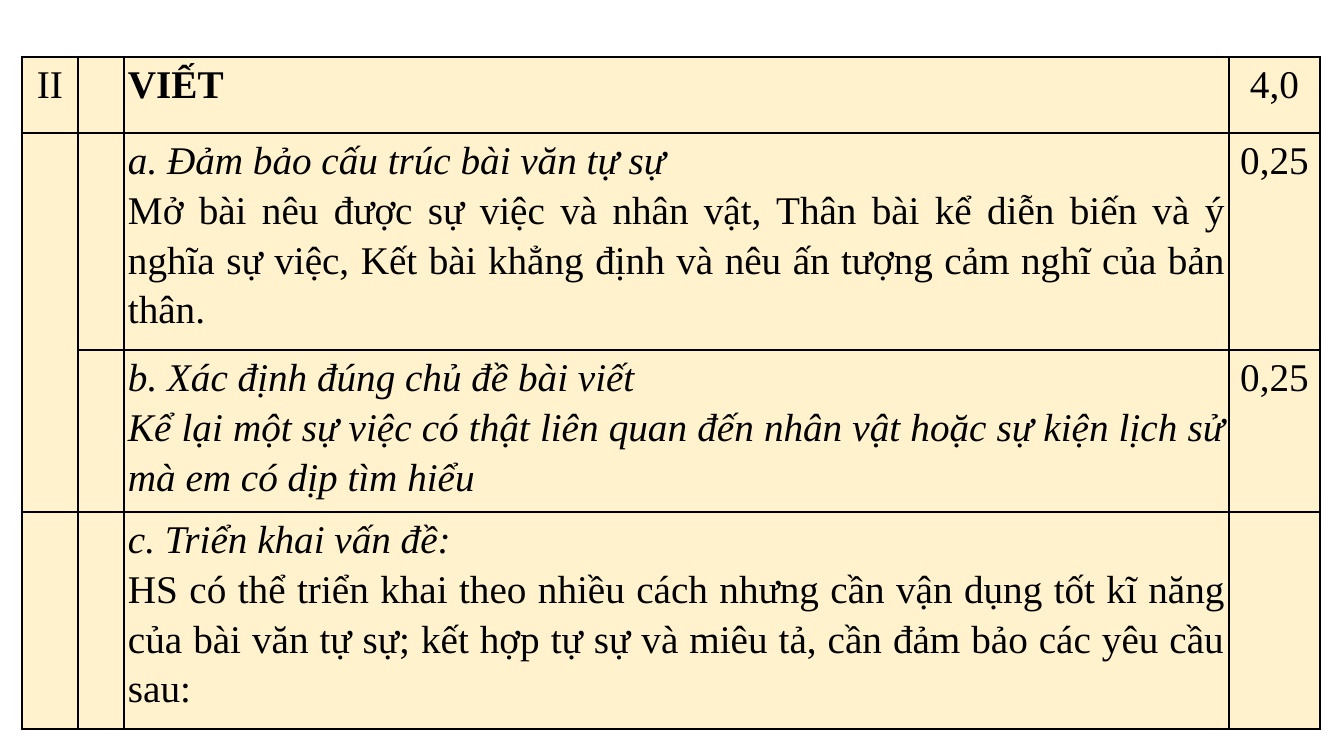
from lxml.etree import SubElement
from pptx import Presentation
from pptx.dml.color import RGBColor
from pptx.enum.text import PP_ALIGN
from pptx.oxml.ns import qn
from pptx.util import Pt

EMU_PER_PX = 914400 / 100.8
SLIDE_SIZE = (1344, 756)
TABLE_LEFT, TABLE_TOP = 22, 57
COLUMN_WIDTHS = [56, 46, 1105, 91]
ROW_HEIGHTS = [76, 217, 162, 217]
SIDE_MARGIN = 4

CREAM = RGBColor(0xFF, 0xF2, 0xCC)
BLACK = RGBColor(0x00, 0x00, 0x00)
FONT_NAME = "Times New Roman"
FONT_SIZE = Pt(28)
BORDER_WIDTH = Pt(1)

NUMBER_COLUMN, CRITERIA_COLUMN, POINTS_COLUMN = 0, 2, 3

# Each row: section number, criteria as (text, style) paragraphs, points
RUBRIC = [
    ("II", [("VIẾT", "bold")], "4,0"),
    ("", [
        ("a. Đảm bảo cấu trúc bài văn tự sự", "italic"),
        ("Mở bài nêu được sự việc và nhân vật, Thân bài kể diễn biến và ý nghĩa sự việc, "
         "Kết bài khẳng định và nêu ấn tượng cảm nghĩ của bản thân.", "plain"),
    ], "0,25"),
    ("", [
        ("b. Xác định đúng chủ đề bài viết", "italic"),
        ("Kể lại một sự việc có thật liên quan đến nhân vật hoặc sự kiện lịch sử "
         "mà em có dịp tìm hiểu", "italic"),
    ], "0,25"),
    ("", [
        ("c. Triển khai vấn đề:", "italic"),
        ("HS có thể triển khai theo nhiều cách nhưng cần vận dụng tốt kĩ năng của bài văn tự sự; "
         "kết hợp tự sự và miêu tả, cần đảm bảo các yêu cầu sau:", "plain"),
    ], ""),
]


def px(length):
    return round(length * EMU_PER_PX)


def format_cell(cell):
    cell.margin_left = cell.margin_right = px(SIDE_MARGIN)
    cell.margin_top = cell.margin_bottom = 0
    properties = cell._tc.get_or_add_tcPr()
    for side in ("a:lnL", "a:lnR", "a:lnT", "a:lnB"):
        line = SubElement(properties, qn(side), w=str(BORDER_WIDTH))
        fill = SubElement(line, qn("a:solidFill"))
        SubElement(fill, qn("a:srgbClr"), val=str(BLACK))
    cell.fill.solid()
    cell.fill.fore_color.rgb = CREAM


def write_cell(cell, paragraphs, alignment, is_heading):
    """Write (text, style) paragraphs; only heading rows have paragraph spacing."""
    frame = cell.text_frame
    for index, (text, style) in enumerate(paragraphs):
        paragraph = frame.paragraphs[0] if index == 0 else frame.add_paragraph()
        paragraph.text = text
        paragraph.alignment = alignment
        paragraph.line_spacing = 1.15
        paragraph.space_before = Pt(2 if is_heading else 0)
        paragraph.space_after = Pt(1 if is_heading else 0)
        font = paragraph.font
        font.name = FONT_NAME
        font.size = FONT_SIZE
        font.bold = style == "bold"
        font.italic = style == "italic"
        font.color.rgb = BLACK


def main():
    presentation = Presentation()
    presentation.slide_width, presentation.slide_height = map(px, SLIDE_SIZE)
    slide = presentation.slides.add_slide(presentation.slide_layouts[6])

    table = slide.shapes.add_table(
        len(ROW_HEIGHTS), len(COLUMN_WIDTHS), px(TABLE_LEFT), px(TABLE_TOP),
        px(sum(COLUMN_WIDTHS)), px(sum(ROW_HEIGHTS))).table
    table.first_row = table.horz_banding = False
    for column, width in zip(table.columns, COLUMN_WIDTHS):
        column.width = px(width)
    for row, height in zip(table.rows, ROW_HEIGHTS):
        row.height = px(height)
    for cell in table.iter_cells():
        format_cell(cell)
    table.cell(1, NUMBER_COLUMN).merge(table.cell(2, NUMBER_COLUMN))

    for row_index, (number, criteria, points) in enumerate(RUBRIC):
        is_heading = row_index == 0
        for column_index, text in ((NUMBER_COLUMN, number), (POINTS_COLUMN, points)):
            if text:
                write_cell(table.cell(row_index, column_index), [(text, "plain")],
                           PP_ALIGN.CENTER, is_heading)
        write_cell(table.cell(row_index, CRITERIA_COLUMN), criteria,
                   PP_ALIGN.JUSTIFY, is_heading)

    presentation.save("out.pptx")


if __name__ == "__main__":
    main()
